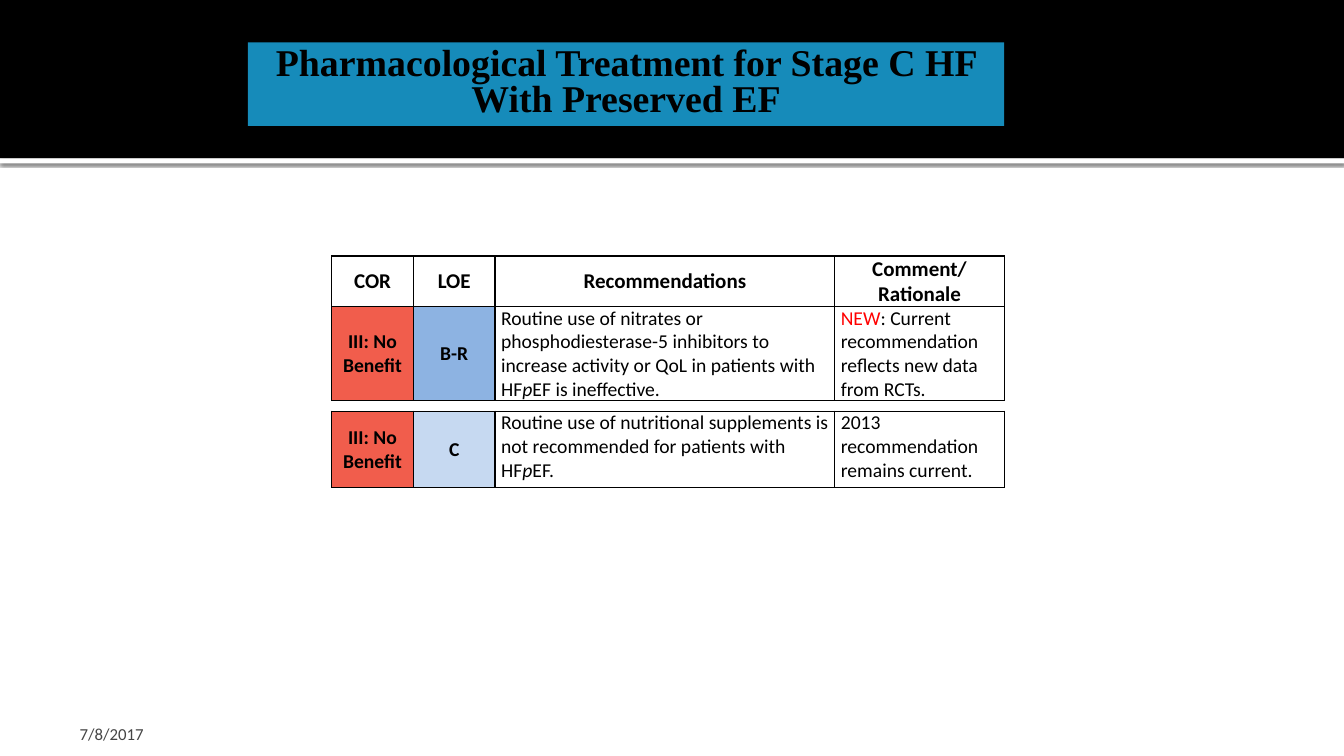
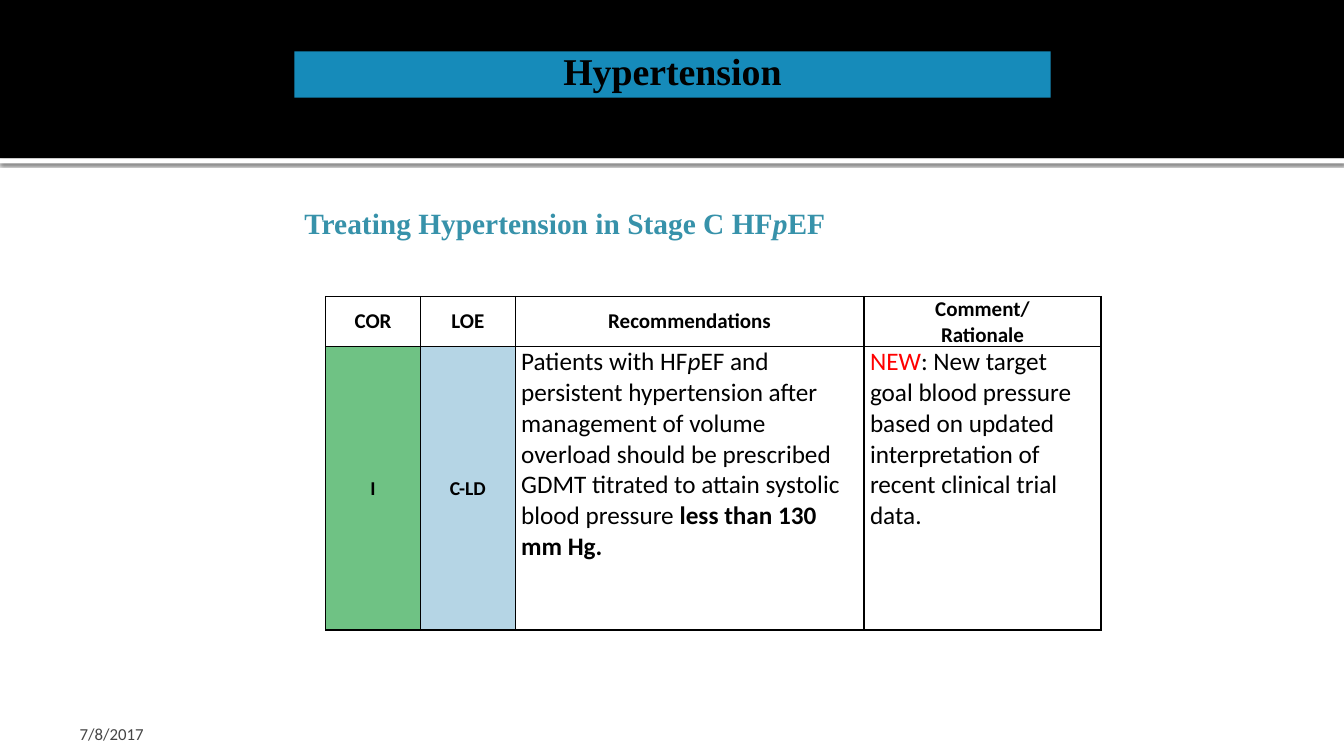
import pptx
import pptx.dml.color
import pptx.enum.shapes
import pptx.enum.text
import pptx.oxml
import pptx.oxml.ns
import pptx.util
from dataclasses import dataclass

Inches = pptx.util.Inches
Pt = pptx.util.Pt
RGB = pptx.dml.color.RGBColor.from_string
ALIGN = pptx.enum.text.PP_ALIGN
ANCHOR = pptx.enum.text.MSO_ANCHOR
RECT = pptx.enum.shapes.MSO_SHAPE.RECTANGLE


@dataclass(frozen=True)
class Theme:
    title_font: str = "Times New Roman"
    body_font: str = "Calibri"
    black: str = "000000"
    white: str = "FFFFFF"
    title_fill: str = "168BBA"
    heading: str = "3792AA"
    date: str = "454545"
    new: str = "FF0000"
    no_benefit: str = "F15D4C"
    strong: str = "6FC284"
    level_b: str = "8DB3E2"
    level_c: str = "C6D9F1"
    level_c_ld: str = "B5D5E5"
    title_size: int = 27
    heading_size: int = 21
    header_size: int = 15
    cell_size: int = 14
    large_cell_size: int = 18
    date_size: int = 12
    border: float = 1
    heavy_border: float = 1.5


T = Theme()
WIDTH = 13.33
BAND_HEIGHT = 1.57
HEADER_HEIGHT = 0.5
ITALIC_P = ("p", {"italic": True})
NEW = ("NEW", {"color": T.new})


# Text: a string, or a list of strings and (string, format) pairs
def write(tf, text, *, size, font=T.body_font, color=T.black, bold=False,
          align=ALIGN.LEFT, anchor=ANCHOR.TOP, insets=(0.1, 0.05, 0.1, 0.05),
          line_spacing=None):
    tf.word_wrap = True
    tf.vertical_anchor = anchor
    (tf.margin_left, tf.margin_top,
     tf.margin_right, tf.margin_bottom) = map(Inches, insets)
    paragraphs = text.split("\n") if isinstance(text, str) else [text]
    for i, runs in enumerate(paragraphs):
        p = tf.add_paragraph() if i else tf.paragraphs[0]
        p.alignment = align
        if line_spacing:
            p.line_spacing = line_spacing
        for run in [runs] if isinstance(runs, str) else runs:
            words, extra = (run, {}) if isinstance(run, str) else run
            r = p.add_run()
            r.text = words
            r.font.name = font
            r.font.size = Pt(size)
            r.font.bold = extra.get("bold", bold)
            r.font.italic = extra.get("italic", False)
            r.font.color.rgb = RGB(extra.get("color", color))


def add_text(s, box, text, **fmt):
    sp = s.shapes.add_textbox(*map(Inches, box))
    write(sp.text_frame, text, **fmt)


def add_rect(s, box, fill):
    sp = s.shapes.add_shape(RECT, *map(Inches, box))
    sp.shadow.inherit = False
    sp.fill.solid()
    sp.fill.fore_color.rgb = RGB(fill)
    sp.line.fill.background()
    return sp


def add_soft_shadow(sp):
    effects = sp._element.spPr.find(pptx.oxml.ns.qn("a:effectLst"))
    effects.append(pptx.oxml.parse_xml(
        f'<a:outerShdw {pptx.oxml.ns.nsdecls("a")} blurRad="{Pt(2.5)}" '
        f'dist="{Pt(0.8)}" dir="5400000" algn="tl" rotWithShape="0">'
        f'<a:srgbClr val="{T.black}"><a:alpha val="60000"/></a:srgbClr>'
        '</a:outerShdw>'))


# Tables
def set_borders(cell, top):
    tcPr = cell._tc.get_or_add_tcPr()
    for side in "LRTB":
        width = Pt(top if side == "T" else T.border)
        tcPr.append(pptx.oxml.parse_xml(
            f'<a:ln{side} {pptx.oxml.ns.nsdecls("a")} w="{width}">'
            f'<a:solidFill><a:srgbClr val="{T.black}"/></a:solidFill>'
            f'</a:ln{side}>'))


def add_row_table(s, left, top, height, widths, cells, top_border=T.border):
    """Draw a one-row table; each cell is (text, fill, format)."""
    box = map(Inches, (left, top, sum(widths), height))
    table = s.shapes.add_table(1, len(widths), *box).table
    table.first_row = table.horz_banding = False
    table.rows[0].height = Inches(height)
    for i, (width, (text, fill, fmt)) in enumerate(zip(widths, cells)):
        table.columns[i].width = Inches(width)
        cell = table.cell(0, i)
        set_borders(cell, top_border)
        if fill:
            cell.fill.solid()
            cell.fill.fore_color.rgb = RGB(fill)
        else:
            cell.fill.background()
        write(cell.text_frame, text, insets=(0.06, 0, 0.06, 0), **fmt)
        cell.vertical_anchor = fmt.get("anchor", ANCHOR.TOP)
        cell.margin_left = cell.margin_right = Inches(0.06)
        cell.margin_top = cell.margin_bottom = 0


def label_format(size):
    return dict(size=size, bold=True, align=ALIGN.CENTER, anchor=ANCHOR.MIDDLE)


def add_header(s, left, top, widths):
    names = ("COR", "LOE", "Recommendations", "Comment/\nRationale")
    fmt = label_format(T.header_size)
    add_row_table(s, left, top, HEADER_HEIGHT, widths,
                  [(name, None, fmt) for name in names])


def add_recommendation(s, left, top, height, widths, cor, loe, advice, comment,
                       size=T.cell_size, top_border=T.border):
    label, body = label_format(T.cell_size), dict(size=size)
    add_row_table(s, left, top, height, widths,
                  [(*cor, label), (*loe, label),
                   (advice, None, body), (comment, None, body)], top_border)


# Parts shared by the slides
def add_base_slide(prs, title, title_box):
    s = prs.slides.add_slide(prs.slide_layouts[6])
    add_soft_shadow(add_rect(s, (0, BAND_HEIGHT, WIDTH, 0.05), T.white))
    add_rect(s, (0, 0, WIDTH, BAND_HEIGHT), T.black)
    tf = add_rect(s, title_box, T.title_fill).text_frame
    write(tf, title, size=T.title_size, font=T.title_font, bold=True,
          align=ALIGN.CENTER, line_spacing=0.8)
    tf.auto_size = pptx.enum.text.MSO_AUTO_SIZE.SHAPE_TO_FIT_TEXT
    add_text(s, (0.67, 7.08, 3.11, 0.3), "7/8/2017", size=T.date_size,
             color=T.date, anchor=ANCHOR.BOTTOM, insets=(0.12, 0.05, 0.05, 0))
    return s


# Slides
def build_treatment(prs):
    s = add_base_slide(
        prs, "Pharmacological Treatment for Stage C HF With Preserved EF",
        (2.46, 0.42, 7.5, 0.83))
    left, top, widths = 3.29, 2.54, (0.81, 0.81, 3.37, 1.68)
    cor = ("III: No Benefit", T.no_benefit)
    add_header(s, left, top, widths)
    add_recommendation(
        s, left, top + HEADER_HEIGHT, 0.93, widths, cor, ("B-R", T.level_b),
        ["Routine use of nitrates or phosphodiesterase-5 inhibitors to "
         "increase activity or QoL in patients with HF", ITALIC_P,
         "EF is ineffective."],
        [NEW, ": Current recommendation reflects new data from RCTs."],
        top_border=T.heavy_border)
    add_recommendation(
        s, left, 4.08, 0.76, widths, cor, ("C", T.level_c),
        ["Routine use of nutritional supplements is not recommended for "
         "patients with HF", ITALIC_P, "EF."],
        "2013 recommendation remains current.")


def build_hypertension(prs):
    s = add_base_slide(prs, "Hypertension", (2.92, 0.51, 7.5, 0.46))
    left, top, widths = 3.23, 2.94, (0.94, 0.94, 3.46, 2.35)
    add_text(s, (2.92, 1.91, 8, 0.59),
             ["Treating Hypertension in Stage C HF", ITALIC_P, "EF"],
             size=T.heading_size, font=T.title_font, color=T.heading,
             bold=True, anchor=ANCHOR.MIDDLE, insets=(0.1, 0.05, 0.05, 0.05))
    add_header(s, left, top, widths)
    add_recommendation(
        s, left, top + HEADER_HEIGHT, 2.81, widths,
        ("I", T.strong), ("C-LD", T.level_c_ld),
        ["Patients with HF", ITALIC_P,
         "EF and persistent hypertension after management of volume overload "
         "should be prescribed GDMT titrated to attain systolic blood "
         "pressure ", ("less than 130 mm Hg.", {"bold": True})],
        [NEW, ": New target goal blood pressure based on updated "
         "interpretation of recent clinical trial data."],
        size=T.large_cell_size)


def main():
    prs = pptx.Presentation()
    prs.slide_width, prs.slide_height = Inches(WIDTH), Inches(7.5)
    build_treatment(prs)
    build_hypertension(prs)
    prs.save("out.pptx")


if __name__ == "__main__":
    main()
